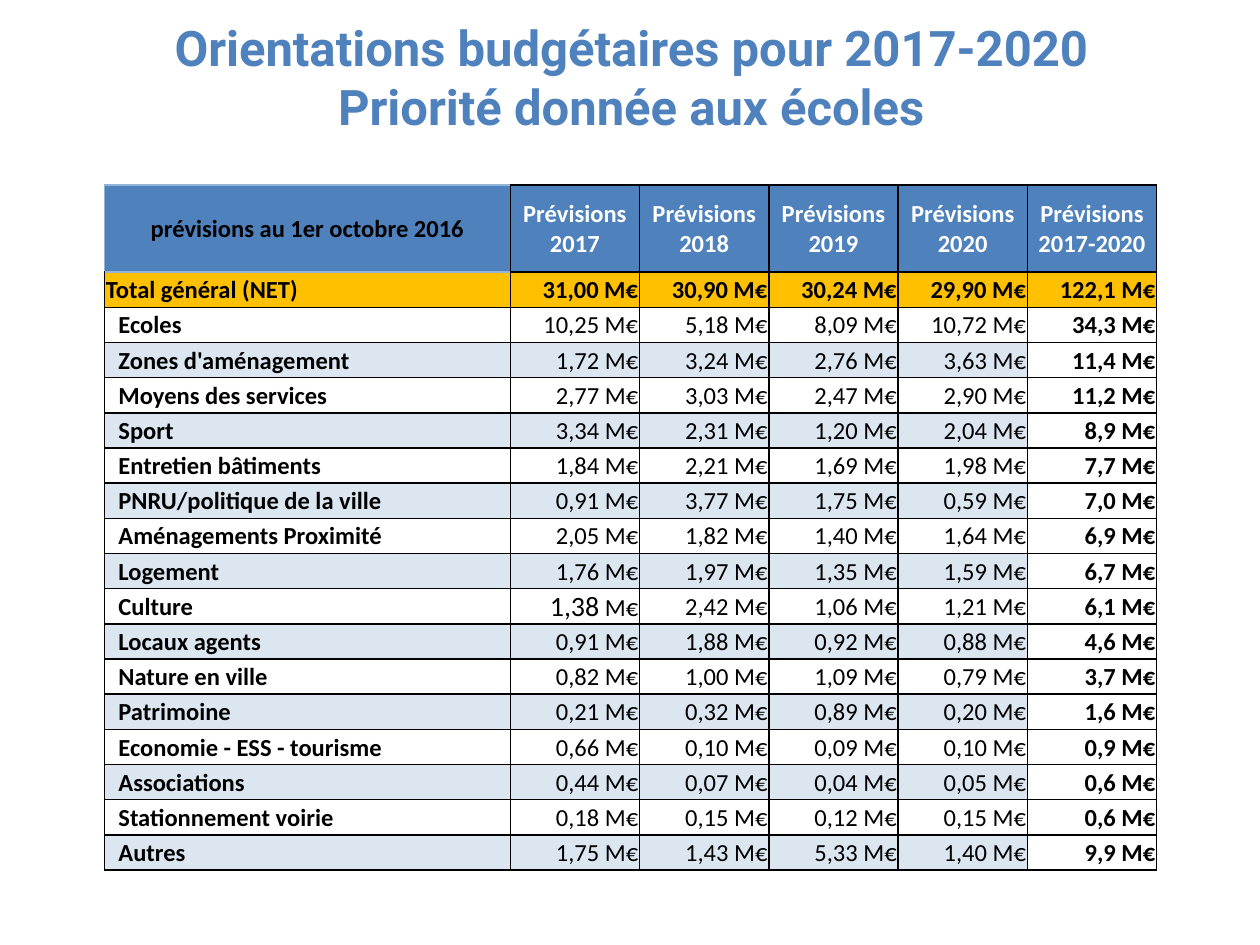
import pptx
import pptx.dml.color
import pptx.enum.text
import pptx.oxml
import pptx.oxml.ns
import pptx.util

Inches, Pt = pptx.util.Inches, pptx.util.Pt
ALIGN = pptx.enum.text.PP_ALIGN
MIDDLE = pptx.enum.text.MSO_ANCHOR.MIDDLE

BLUE, PALE_BLUE, BAND, GOLD = "4F81BD", "95B3D7", "DCE6F1", "FFC000"
BLACK, WHITE = "000000", "FFFFFF"

TITLE = ["Orientations budgétaires pour 2017-2020", "Priorité donnée aux écoles"]
CORNER = "prévisions au 1er octobre 2016"
PERIODS = ["2017", "2018", "2019", "2020", "2017-2020"]
TOTAL = ("Total général (NET)", "31,00 30,90 30,24 29,90 122,1")
SECTORS = [
    ("Ecoles", "10,25 5,18 8,09 10,72 34,3"),
    ("Zones d'aménagement", "1,72 3,24 2,76 3,63 11,4"),
    ("Moyens des services", "2,77 3,03 2,47 2,90 11,2"),
    ("Sport", "3,34 2,31 1,20 2,04 8,9"),
    ("Entretien bâtiments", "1,84 2,21 1,69 1,98 7,7"),
    ("PNRU/politique de la ville", "0,91 3,77 1,75 0,59 7,0"),
    ("Aménagements Proximité", "2,05 1,82 1,40 1,64 6,9"),
    ("Logement", "1,76 1,97 1,35 1,59 6,7"),
    ("Culture", "1,38 2,42 1,06 1,21 6,1"),
    ("Locaux agents", "0,91 1,88 0,92 0,88 4,6"),
    ("Nature en ville", "0,82 1,00 1,09 0,79 3,7"),
    ("Patrimoine", "0,21 0,32 0,89 0,20 1,6"),
    ("Economie - ESS - tourisme", "0,66 0,10 0,09 0,10 0,9"),
    ("Associations", "0,44 0,07 0,04 0,05 0,6"),
    ("Stationnement voirie", "0,18 0,15 0,12 0,15 0,6"),
    ("Autres", "1,75 1,43 5,33 1,40 9,9"),
]
ENLARGED = ("Culture", 1)  # the figure set in a larger size


def rgb(hex_string):
    return pptx.dml.color.RGBColor.from_string(hex_string)


def add_span(para, text, size, color, bold, font="Calibri"):
    span = para.add_run()
    span.text = text
    span.font.name, span.font.size, span.font.bold = font, Pt(size), bold
    span.font.color.rgb = rgb(color)


def add_title(page, left, top, width, height):
    box = page.shapes.add_textbox(*map(Inches, (left, top, width, height)))
    box.text_frame.word_wrap = True
    box.text_frame.vertical_anchor = MIDDLE
    para = box.text_frame.paragraphs[0]
    para.alignment = ALIGN.CENTER
    for number, line in enumerate(TITLE):
        if number:
            para.add_line_break()
        add_span(para, line, 28, BLUE, True, "Roboto")


def set_borders(cell, **special):
    """Draw black one-point borders; special gives other colours by side."""
    properties = cell._tc.get_or_add_tcPr()
    for side in "LRTB":
        properties.append(pptx.oxml.parse_xml(
            f'<a:ln{side} {pptx.oxml.ns.nsdecls("a")} w="12700"><a:solidFill>'
            f'<a:srgbClr val="{special.get(side, BLACK)}"/></a:solidFill></a:ln{side}>'))


def fill_cell(cell, spans, align, fill=None, color=BLACK, bold=True, indent=0, **borders):
    """Write spans, a list of (text, size), and style the cell."""
    cell.vertical_anchor = MIDDLE
    cell.margin_left = cell.margin_right = cell.margin_top = Inches(0.01)
    cell.margin_bottom = 0
    set_borders(cell, **borders)
    if fill:
        cell.fill.solid()
        cell.fill.fore_color.rgb = rgb(fill)
    else:
        cell.fill.background()
    para = cell.text_frame.paragraphs[0]
    para.alignment = align
    if indent:
        para._p.get_or_add_pPr().set("marL", str(Inches(indent)))
    for text, size in spans:
        add_span(para, text, size, color, bold)


def fill_header(table):
    fill_cell(table.cell(0, 0), [(CORNER, 14)], ALIGN.CENTER, BLUE,
              L=PALE_BLUE, T=PALE_BLUE, B=PALE_BLUE)
    for column, period in enumerate(PERIODS, 1):
        fill_cell(table.cell(0, column), [(f"Prévisions {period}", 14)],
                  ALIGN.CENTER, BLUE, WHITE)


def fill_total(table):
    label, figures = TOTAL
    fill_cell(table.cell(1, 0), [(label, 14)], ALIGN.LEFT, GOLD, T=PALE_BLUE)
    for column, figure in enumerate(figures.split(), 1):
        fill_cell(table.cell(1, column), [(f"{figure} M€", 14)], ALIGN.RIGHT, GOLD)


def fill_sector(table, row, label, figures):
    band = BAND if row % 2 else None
    fill_cell(table.cell(row, 0), [(label, 14)], ALIGN.LEFT, band, indent=0.1)
    for column, figure in enumerate(figures.split(), 1):
        last = column == len(PERIODS)
        spans = [(f"{figure} M€", 14)]
        if (label, column) == ENLARGED:
            spans = [(figure, 16), (" M€", 14)]
        fill_cell(table.cell(row, column), spans, ALIGN.RIGHT,
                  None if last else band, bold=last)


def add_budget_table(page, left, top, width, height):
    rows, columns = len(SECTORS) + 2, len(PERIODS) + 1
    frame = page.shapes.add_table(rows, columns, *map(Inches, (left, top, width, height)))
    table = frame.table
    table.first_row = table.horz_banding = False
    label_width, header_height = 3.22, 0.69
    for column in table.columns:
        column.width = Inches((width - label_width) / (columns - 1))
    for row in table.rows:
        row.height = Inches((height - header_height) / (rows - 1))
    table.columns[0].width = Inches(label_width)
    table.rows[0].height = Inches(header_height)
    fill_header(table)
    fill_total(table)
    for row, (label, figures) in enumerate(SECTORS, 2):
        fill_sector(table, row, label, figures)


def main():
    deck = pptx.Presentation()
    deck.slide_width, deck.slide_height = Inches(10), Inches(7.5)
    page = deck.slides.add_slide(deck.slide_layouts[6])
    add_title(page, 0.51, -0.02, 9, 1.25)
    add_budget_table(page, 0.83, 1.47, 8.35, 5.44)
    deck.save("out.pptx")


if __name__ == "__main__":
    main()
